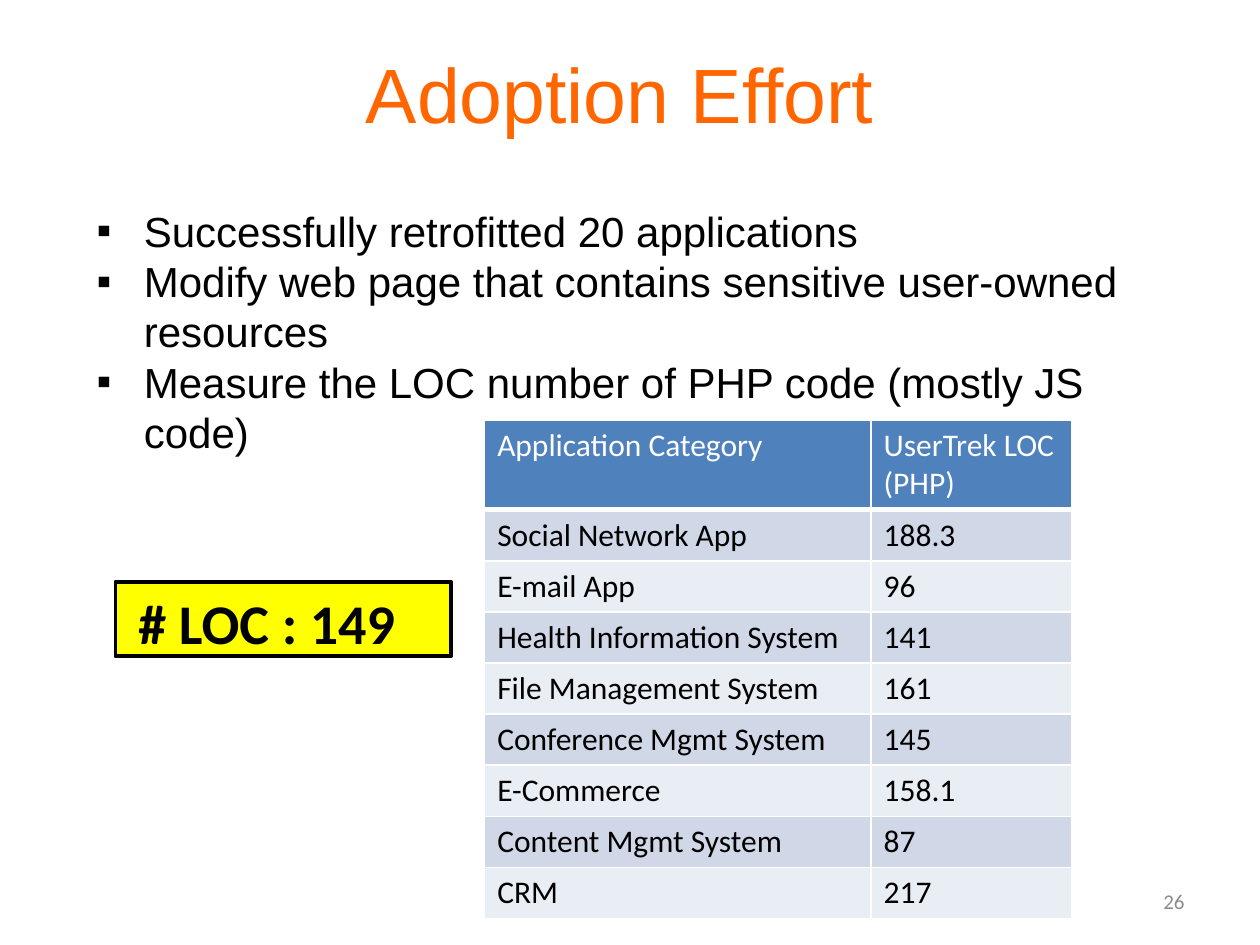
from dataclasses import dataclass

from lxml.etree import SubElement
from pptx import Presentation
from pptx.dml.color import RGBColor as RGB
from pptx.enum.shapes import MSO_SHAPE as Preset
from pptx.enum.text import MSO_ANCHOR as Anchor, MSO_AUTO_SIZE as AutoSize, PP_ALIGN as Align
from pptx.oxml.ns import qn
from pptx.util import Cm, Pt


@dataclass(frozen=True)
class Theme:
    heading_font: str = "Arial"
    table_font: str = "Calibri"
    title_size: int = 44
    bullet_size: int = 24
    table_size: int = 18
    callout_size: int = 32
    number_size: int = 12
    title: str = "FF6600"
    ink: str = "000000"
    white: str = "FFFFFF"
    muted: str = "8C8C8C"
    callout: str = "FFFF00"
    header: str = "4F81BD"
    bands: tuple = ("D0D8E8", "E9EDF4")


THEME = Theme()

TITLE = "Adoption Effort"
BULLETS = [
    "Successfully retrofitted 20 applications",
    "Modify web page that contains sensitive user-owned resources",
    "Measure the LOC number of PHP code (mostly JS code)",
]
LOC_TABLE = [
    ("Application Category", "UserTrek LOC (PHP)"),
    ("Social Network App", "188.3"),
    ("E-mail App", "96"),
    ("Health Information System", "141"),
    ("File Management System", "161"),
    ("Conference Mgmt System", "145"),
    ("E-Commerce", "158.1"),
    ("Content Mgmt System", "87"),
    ("CRM", "217"),
]
CALLOUT = "# LOC : 149"
SLIDE_NUMBER = "26"

COLUMN_WIDTHS = (7.79, 4.04)
HEADER_HEIGHT, ROW_HEIGHT = 1.76, 1.02
BULLET_INDENT = 0.95


def add_run(paragraph, text, font, size, color, bold=False):
    run = paragraph.add_run()
    run.text = text
    run.font.name = font
    run.font.size = Pt(size)
    run.font.bold = bold
    run.font.color.rgb = RGB.from_string(color)


def add_text_box(shapes, left, top, width, height, anchor=Anchor.TOP, wrap=True):
    frame = shapes.add_textbox(Cm(left), Cm(top), Cm(width), Cm(height)).text_frame
    frame.word_wrap = wrap
    frame.vertical_anchor = anchor
    frame.auto_size = AutoSize.NONE
    return frame


def add_bullet(paragraph):
    properties = paragraph._p.get_or_add_pPr()
    properties.set("marL", str(Cm(BULLET_INDENT)))
    properties.set("indent", str(-Cm(BULLET_INDENT)))
    SubElement(properties, qn("a:buFont")).set("typeface", THEME.heading_font)
    SubElement(properties, qn("a:buChar")).set("char", "▪")


def set_cell_look(cell, fill, bottom_width):
    """Draw the white borders first, since the schema puts them before the fill."""
    properties = cell._tc.get_or_add_tcPr()
    for side, width in (("L", 1), ("R", 1), ("T", 1), ("B", bottom_width)):
        line = SubElement(properties, qn(f"a:ln{side}"), w=str(Pt(width)))
        solid = SubElement(line, qn("a:solidFill"))
        SubElement(solid, qn("a:srgbClr")).set("val", THEME.white)
    cell.fill.solid()
    cell.fill.fore_color.rgb = RGB.from_string(fill)


def add_loc_table(shapes):
    heights = [HEADER_HEIGHT] + [ROW_HEIGHT] * (len(LOC_TABLE) - 1)
    table = shapes.add_table(
        len(LOC_TABLE), len(COLUMN_WIDTHS), Cm(9.77), Cm(8.47),
        Cm(sum(COLUMN_WIDTHS)), Cm(sum(heights)),
    ).table
    for column, width in zip(table.columns, COLUMN_WIDTHS):
        column.width = Cm(width)
    for index, (values, height) in enumerate(zip(LOC_TABLE, heights)):
        table.rows[index].height = Cm(height)
        is_header = index == 0
        fill = THEME.header if is_header else THEME.bands[(index - 1) % 2]
        color = THEME.white if is_header else THEME.ink
        for cell, value in zip(table.rows[index].cells, values):
            set_cell_look(cell, fill, 3 if is_header else 1)
            add_run(cell.text_frame.paragraphs[0], value, THEME.table_font, THEME.table_size, color)


def add_callout(shapes):
    group = shapes.add_group_shape()
    box = group.shapes.add_shape(Preset.RECTANGLE, Cm(2.33), Cm(11.73), Cm(6.76), Cm(1.5))
    box.shadow.inherit = False
    box.fill.solid()
    box.fill.fore_color.rgb = RGB.from_string(THEME.callout)
    box.line.color.rgb = RGB.from_string(THEME.ink)
    box.line.width = Pt(2.25)
    frame = add_text_box(group.shapes, 2.54, 11.73, 5.74, 1.62, wrap=False)
    add_run(frame.paragraphs[0], CALLOUT, THEME.table_font, THEME.callout_size, THEME.ink, bold=True)


def main():
    presentation = Presentation()
    presentation.slide_width, presentation.slide_height = Cm(25.4), Cm(19.05)
    shapes = presentation.slides.add_slide(presentation.slide_layouts[6]).shapes

    title = add_text_box(shapes, 1.07, 0.28, 22.86, 3.18, Anchor.MIDDLE).paragraphs[0]
    title.alignment = Align.CENTER
    add_run(title, TITLE, THEME.heading_font, THEME.title_size, THEME.title)

    bullets = add_text_box(shapes, 1.7, 4.01, 21.59, 5.38)
    for index, text in enumerate(BULLETS):
        paragraph = bullets.add_paragraph() if index else bullets.paragraphs[0]
        add_bullet(paragraph)
        add_run(paragraph, text, THEME.heading_font, THEME.bullet_size, THEME.ink)

    add_loc_table(shapes)
    add_callout(shapes)

    number = add_text_box(shapes, 18.2, 17.65, 5.93, 1.02, Anchor.MIDDLE).paragraphs[0]
    number.alignment = Align.RIGHT
    add_run(number, SLIDE_NUMBER, THEME.table_font, THEME.number_size, THEME.muted)

    presentation.save("out.pptx")


if __name__ == "__main__":
    main()
